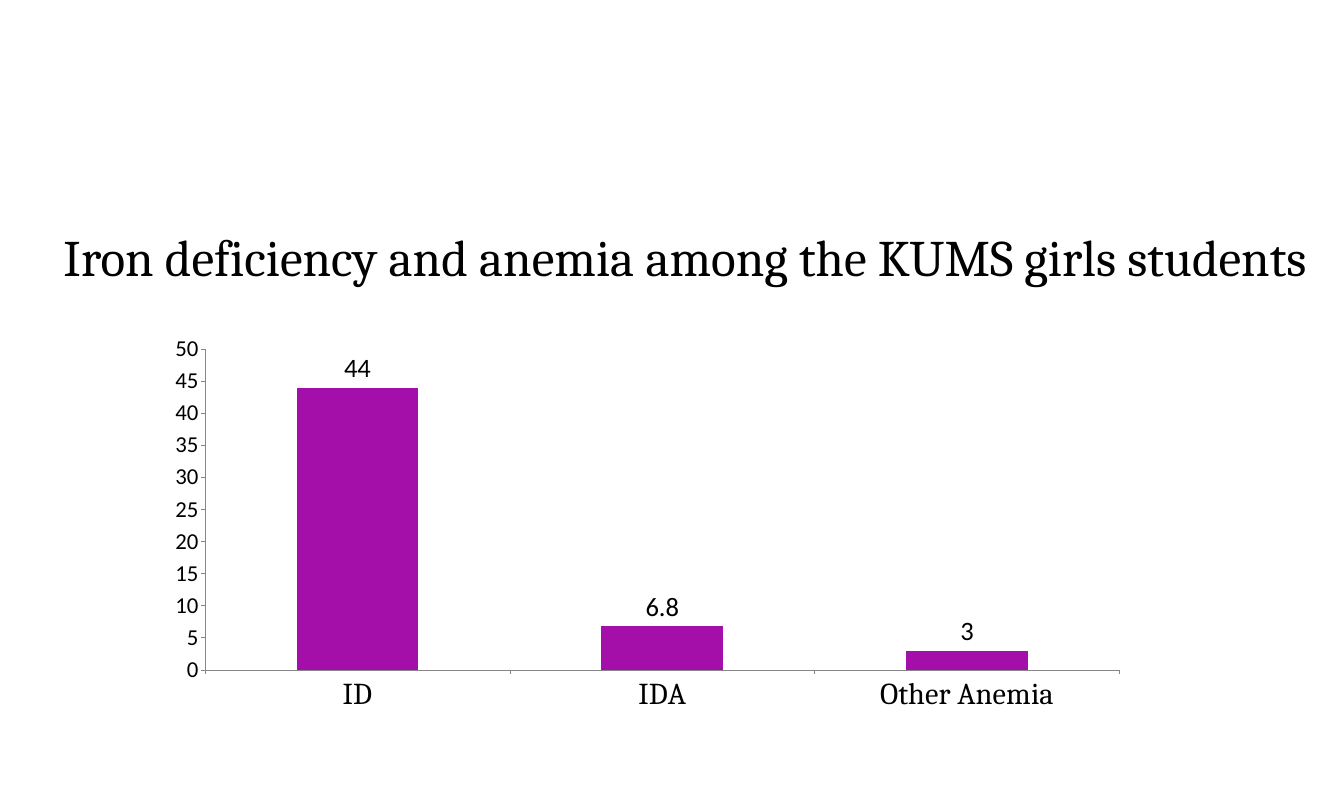
from pptx import Presentation
from pptx.chart.data import CategoryChartData
from pptx.dml.color import RGBColor
from pptx.enum import chart as ch, text
from pptx.util import Inches, Pt


def rgb(value):
    return RGBColor.from_string(value)


def style_font(font, size, name="Calibri"):
    font.size = Pt(size)
    font.name = name
    font.bold = False
    font.color.rgb = rgb("000000")


def add_title(slide, left, top, width, height):
    sp = slide.shapes.title
    sp.left, sp.top, sp.width, sp.height = map(Inches, (left, top, width, height))
    tf = sp.text_frame
    tf.word_wrap = True
    tf.auto_size = text.MSO_AUTO_SIZE.NONE
    tf.vertical_anchor = text.MSO_ANCHOR.MIDDLE
    tf.margin_left = tf.margin_right = Inches(0.18)
    tf.margin_top = tf.margin_bottom = Inches(0.09)
    p = tf.paragraphs[0]
    p.text = "Iron deficiency and anemia among the KUMS girls students"
    p.alignment = text.PP_ALIGN.CENTER
    style_font(p.font, 54, "Cambria")


def style_axis(axis, size, name):
    axis.has_major_gridlines = False
    axis.major_tick_mark = ch.XL_TICK_MARK.OUTSIDE
    axis.minor_tick_mark = ch.XL_TICK_MARK.NONE
    axis.format.line.color.rgb = rgb("868686")
    axis.format.line.width = Pt(0.75)
    style_font(axis.tick_labels.font, size, name)


def add_anemia_chart(slide, left, top, width, height):
    data = CategoryChartData()
    data.categories = ["ID", "IDA", "Other Anemia"]
    data.add_series("Series 1", (44, 6.8, 3))
    box = map(Inches, (left, top, width, height))
    chart = slide.shapes.add_chart(
        ch.XL_CHART_TYPE.COLUMN_CLUSTERED, *box, data).chart
    chart.has_title = False
    chart.has_legend = False
    style_font(chart.font, 10)
    style_axis(chart.category_axis, 32, "Cambria")
    style_axis(chart.value_axis, 24, "Calibri")
    chart.value_axis.minimum_scale = 0
    chart.value_axis.maximum_scale = 50
    chart.value_axis.major_unit = 5

    plot = chart.plots[0]
    plot.gap_width = 150
    plot.vary_by_categories = False
    series = plot.series[0]
    series.format.fill.solid()
    series.format.fill.fore_color.rgb = rgb("A50FA9")
    labels = series.data_labels
    labels.show_value = True
    labels.position = ch.XL_LABEL_POSITION.OUTSIDE_END
    style_font(labels.font, 28)


def main():
    prs = Presentation()
    prs.slide_width, prs.slide_height = Inches(19.69), Inches(11.81)
    slide = prs.slides.add_slide(prs.slide_layouts[5])
    slide.background.fill.solid()
    slide.background.fill.fore_color.rgb = rgb("FFFFFF")
    add_title(slide, 0.39, 2.76, 19.29, 1.97)
    add_anemia_chart(slide, 2.28, 4.8, 14.41, 5.75)
    prs.save("out.pptx")


if __name__ == "__main__":
    main()
